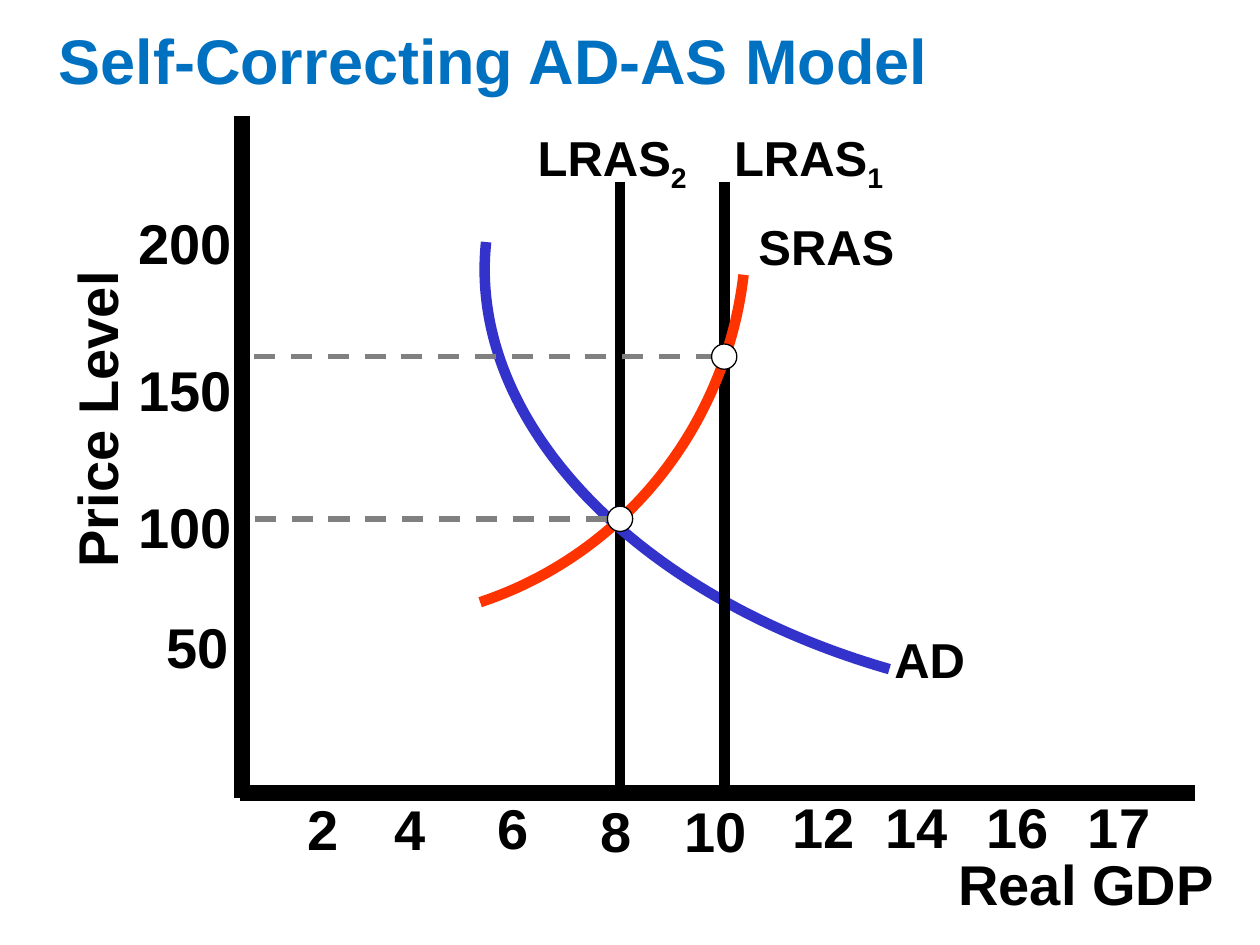
from dataclasses import dataclass

from lxml import etree
from pptx import Presentation
from pptx.dml.color import RGBColor
from pptx.enum.dml import MSO_LINE
from pptx.enum.shapes import MSO_CONNECTOR, MSO_SHAPE
from pptx.enum.text import MSO_AUTO_SIZE, PP_ALIGN
from pptx.oxml.ns import qn
from pptx.slide import Slide
from pptx.util import Cm, Pt

STRAIGHT = MSO_CONNECTOR.STRAIGHT
OVAL = MSO_SHAPE.OVAL
DASH = MSO_LINE.DASH
FIT_SHAPE = MSO_AUTO_SIZE.SHAPE_TO_FIT_TEXT
LEFT, CENTER = PP_ALIGN.LEFT, PP_ALIGN.CENTER

BLACK, WHITE, GREY = "000000", "FFFFFF", "808080"
TITLE_BLUE, DEMAND_BLUE, SUPPLY_RED = "0070C0", "3333CC", "FF3300"
AXIS_X, AXIS_Y = 4.88, 15.98
LRAS_1_X, LRAS_2_X = 14.6, 12.5
LRAS_TOP = 3.66
HIGH_PRICE_Y, LOW_PRICE_Y = 7.19, 10.46
MARKER_SIZE = 0.51

Point = tuple[float, float]


@dataclass(frozen=True)
class Label:
    text: str
    left: float
    top: float
    width: float
    height: float = 1.47
    size: int = 32
    align: PP_ALIGN = CENTER
    subscript: str = ""
    color: str = BLACK
    rotation: float = 0


@dataclass(frozen=True)
class Rule:
    start: Point
    end: Point
    weight: float = 6
    color: str = BLACK
    dashed: bool = False


@dataclass(frozen=True)
class Curve:
    points: tuple[Point, Point, Point, Point]
    color: str


def curve_label(text: str, left: float, top: float, width: float, subscript: str = "") -> Label:
    return Label(text, left, top, width, 1.35, 28, LEFT, subscript)


PRICE_TICKS = [
    Label("200", 2.54, 4.24, 2.54, align=LEFT),
    Label("150", 2.54, 7.19, 2.51, align=LEFT),
    Label("100", 2.54, 9.96, 2.49, align=LEFT),
    Label("50", 3.1, 12.37, 2.97, align=LEFT),
]
GDP_TICKS = [
    Label("2", 5.56, 16.05, 1.9),
    Label("4", 7.42, 16.05, 1.7),
    Label("6", 9.6, 16.03, 1.47),
    Label("8", 11.58, 16.08, 1.7),
    Label("10", 13.34, 16.08, 2.16),
    Label("12", 15.44, 16, 2.34),
    Label("14", 17.35, 16, 2.26),
    Label("16", 19.35, 16, 2.34),
    Label("17", 21.39, 16, 2.34),
]
AXIS_TITLES = [
    Label("Price Level", -2.01, 7.72, 8.05, rotation=270),
    Label("Real GDP", 18.62, 17.15, 6.55),
]
CURVE_LABELS = [
    curve_label("AD", 17.78, 12.7, 2.97),
    curve_label("LRAS", 10.59, 2.46, 3.76, "2"),
    curve_label("SRAS", 15.04, 4.37, 5.08),
    curve_label("LRAS", 14.55, 2.46, 3.76, "1"),
]
TITLE = Label("Self-Correcting AD-AS Model", 0.84, 0.48, 18.21, 1.63, 36, color=TITLE_BLUE)

LRAS_2 = Rule((LRAS_2_X, LRAS_TOP), (LRAS_2_X, 15.88))
LRAS_1 = Rule((LRAS_1_X, LRAS_TOP), (LRAS_1_X, 16.03))
DEMAND = Curve(((17.93, 13.49), (12.78, 12.01), (9.42, 8.46), (9.8, 4.88)), DEMAND_BLUE)
SUPPLY = Curve(((14.99, 5.54), (14.63, 8.61), (12.57, 11.18), (9.68, 12.14)), SUPPLY_RED)
AXES = [
    Rule((4.83, AXIS_Y), (24.08, AXIS_Y), 9),
    Rule((AXIS_X, 2.34), (AXIS_X, 16.08), 9),
]
GUIDES = [
    Rule((14.45, HIGH_PRICE_Y), (AXIS_X, HIGH_PRICE_Y), 3, GREY, True),
    Rule((12.24, LOW_PRICE_Y), (5.05, LOW_PRICE_Y), 3, GREY, True),
]
EQUILIBRIA = [(LRAS_2_X, LOW_PRICE_Y), (LRAS_1_X, HIGH_PRICE_Y)]


def rgb(color: str) -> RGBColor:
    return RGBColor.from_string(color)


def draw_label(page: Slide, label: Label) -> None:
    box = page.shapes.add_textbox(
        Cm(label.left), Cm(label.top), Cm(label.width), Cm(label.height)
    )
    box.rotation = label.rotation
    frame = box.text_frame
    frame.word_wrap = True
    frame.auto_size = FIT_SHAPE
    para = frame.paragraphs[0]
    para.alignment = label.align
    para.line_spacing = 0.9
    for text in filter(None, (label.text, label.subscript)):
        span = para.add_run()
        span.text = text
        span.font.name = "Arial"
        span.font.size = Pt(label.size)
        span.font.bold = True
        span.font.color.rgb = rgb(label.color)
    if label.subscript:
        span.font._element.set("baseline", "-25000")


def draw_rule(page: Slide, rule: Rule) -> None:
    connector = page.shapes.add_connector(
        STRAIGHT, *(Cm(value) for value in rule.start + rule.end)
    )
    connector.line.color.rgb = rgb(rule.color)
    connector.line.width = Pt(rule.weight)
    if rule.dashed:
        connector.line.dash_style = DASH
    etree.SubElement(connector._element.spPr, qn("a:effectLst"))


def draw_curve(page: Slide, curve: Curve) -> None:
    start, *rest = [(Cm(x), Cm(y)) for x, y in curve.points]
    builder = page.shapes.build_freeform(*start)
    builder.add_line_segments(rest, close=False)
    shape = builder.convert_to_shape()
    shape.shadow.inherit = False
    shape.fill.background()
    shape.line.color.rgb = rgb(curve.color)
    shape.line.width = Pt(6)
    segments = list(shape._element.iter(qn("a:lnTo")))
    outline = segments[0].getparent()
    bezier = etree.SubElement(outline, qn("a:cubicBezTo"))
    for segment in segments:
        bezier.append(segment[0])
        outline.remove(segment)


def draw_marker(page: Slide, center: Point) -> None:
    left, top = (Cm(value - MARKER_SIZE / 2) for value in center)
    marker = page.shapes.add_shape(OVAL, left, top, Cm(MARKER_SIZE), Cm(MARKER_SIZE))
    marker.shadow.inherit = False
    marker.fill.solid()
    marker.fill.fore_color.rgb = rgb(WHITE)
    marker.line.color.rgb = rgb(BLACK)
    marker.line.width = Pt(0.75)


def main() -> None:
    deck = Presentation()
    deck.slide_width, deck.slide_height = Cm(25.4), Cm(19.05)
    page = deck.slides.add_slide(deck.slide_layouts[6])
    draw_rule(page, LRAS_2)
    draw_curve(page, DEMAND)
    draw_rule(page, LRAS_1)
    draw_curve(page, SUPPLY)
    for rule in AXES + GUIDES:
        draw_rule(page, rule)
    for center in EQUILIBRIA:
        draw_marker(page, center)
    for label in [*PRICE_TICKS, *GDP_TICKS, *AXIS_TITLES, *CURVE_LABELS, TITLE]:
        draw_label(page, label)
    deck.save("out.pptx")


if __name__ == "__main__":
    main()
